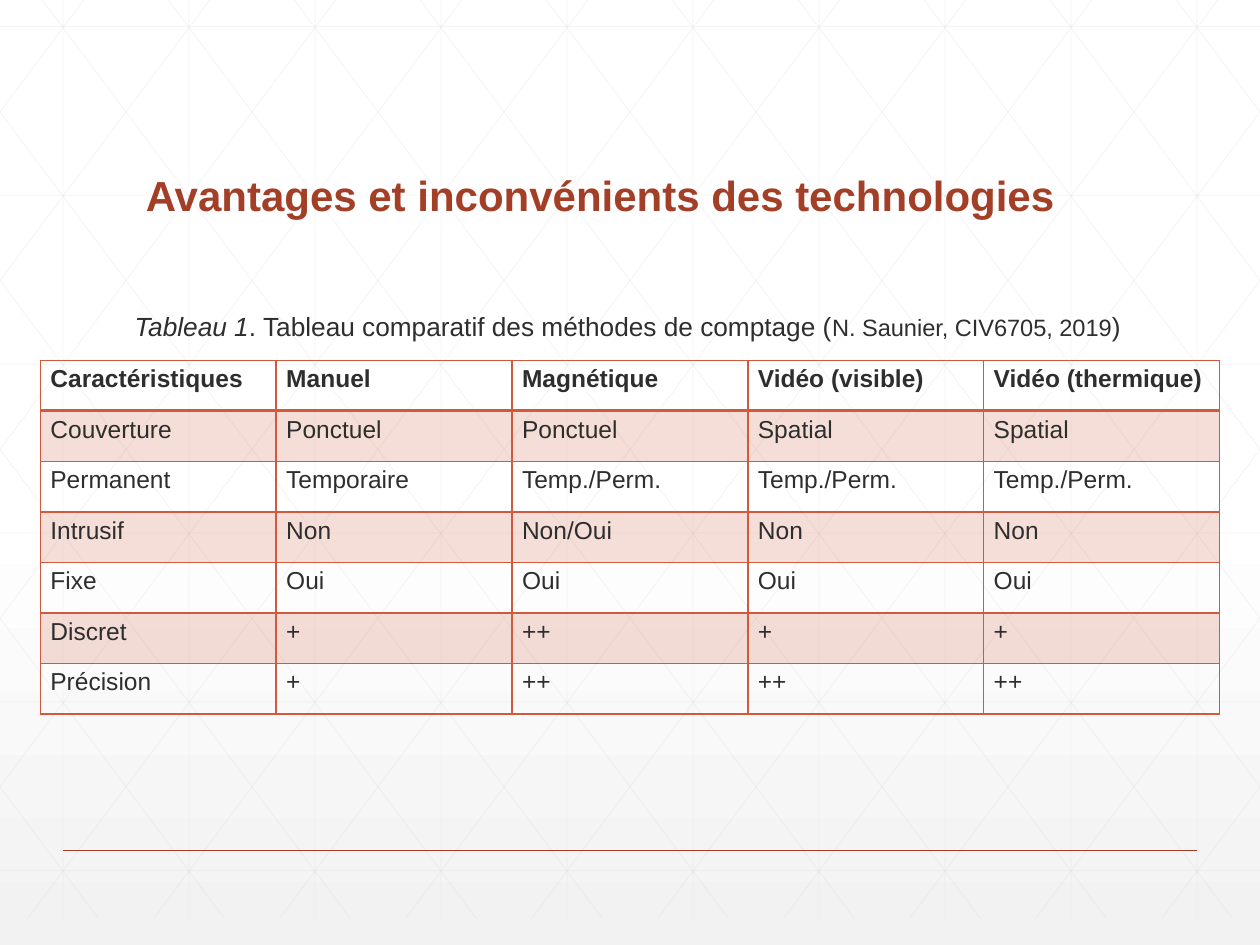
from dataclasses import dataclass

from lxml import etree
from pptx import Presentation
from pptx.dml.color import RGBColor
from pptx.enum.shapes import MSO_CONNECTOR
from pptx.enum.text import MSO_ANCHOR
from pptx.oxml import parse_xml
from pptx.oxml.ns import nsdecls, qn
from pptx.util import Inches, Pt

STRAIGHT = MSO_CONNECTOR.STRAIGHT
TOP, BOTTOM = MSO_ANCHOR.TOP, MSO_ANCHOR.BOTTOM
WIDTH, HEIGHT = 10, 7.5
GRID_TOP, GRID_BOTTOM = -0.21, 7.29
COL, ROW = 1, 1.34
DIAGONAL_START, DIAGONAL_RUN = 0.18, 5.6

ROWS = [
    ["Caractéristiques", "Manuel", "Magnétique", "Vidéo (visible)", "Vidéo (thermique)"],
    ["Couverture", "Ponctuel", "Ponctuel", "Spatial", "Spatial"],
    ["Permanent", "Temporaire", "Temp./Perm.", "Temp./Perm.", "Temp./Perm."],
    ["Intrusif", "Non", "Non/Oui", "Non", "Non"],
    ["Fixe", "Oui", "Oui", "Oui", "Oui"],
    ["Discret", "+", "++", "+", "+"],
    ["Précision", "+", "++", "++", "++"],
]


@dataclass(frozen=True)
class Theme:
    font: str = "Arial"
    text: str = "2D2E2D"
    title: str = "A43F27"
    accent: str = "D15A3E"
    grid: str = "D9D9D9"
    bg_top: str = "FFFFFF"
    bg_bottom: str = "F2F2F2"
    title_size: float = 24
    caption_size: float = 15
    source_size: float = 13.5
    cell_size: float = 14


THEME = Theme()


def set_alpha(fill, percent):
    color = fill._xPr.find(".//" + qn("a:srgbClr"))
    etree.SubElement(color, qn("a:alpha")).set("val", str(percent * 1000))


def add_run(p, text, size=THEME.cell_size, color=THEME.text, bold=False, italic=False):
    r = p.add_run()
    r.text = text
    r.font.name = THEME.font
    r.font.size = Pt(size)
    r.font.bold = bold
    r.font.italic = italic
    r.font.color.rgb = RGBColor.from_string(color)


def add_text(s, box, runs, anchor=TOP, wrap=True, spacing=None):
    tf = s.shapes.add_textbox(*map(Inches, box)).text_frame
    tf.word_wrap = wrap
    tf.vertical_anchor = anchor
    p = tf.paragraphs[0]
    p.line_spacing = spacing
    for text, style in runs:
        add_run(p, text, **style)


def add_line(shapes, start, end, color, width, alpha=None):
    line = shapes.add_connector(STRAIGHT, *map(Inches, (*start, *end)))
    line.line.color.rgb = RGBColor.from_string(color)
    line.line.width = Pt(width)
    if alpha:
        set_alpha(line.line.fill, alpha)
    etree.SubElement(line._element.spPr, qn("a:effectLst"))


def set_background(s):
    fill = s.background.fill
    fill.gradient()
    fill.gradient_angle = 270
    stops = ((0.53, THEME.bg_top), (1, THEME.bg_bottom))
    for stop, (position, color) in zip(fill.gradient_stops, stops):
        stop.position = position
        stop.color.rgb = RGBColor.from_string(color)


def diagonal(x):
    slope = (GRID_BOTTOM - GRID_TOP) / DIAGONAL_RUN
    left, right = max(x, 0), min(x + DIAGONAL_RUN, WIDTH)
    return [(px, GRID_TOP + (px - x) * slope) for px in (left, right)]


def add_grid(s):
    lines = []
    for i in range(10):
        x = (i + 0.5) * COL
        lines.append(((x, GRID_TOP), (x, GRID_BOTTOM)))
    for i in range(6):
        y = 0.21 + i * ROW
        lines.append(((0, y), (WIDTH, y)))
    for i in range(-5, 10):
        start, end = diagonal(DIAGONAL_START + i * COL)
        lines.append((start, end))
        lines.append(((WIDTH - start[0], start[1]), (WIDTH - end[0], end[1])))
    shapes = s.shapes.add_group_shape().shapes
    for start, end in lines:
        add_line(shapes, start, end, THEME.grid, 0.5, alpha=25)


def set_borders(cell, **widths):
    tcPr = cell._tc.get_or_add_tcPr()
    for i, side in enumerate("LRTB"):
        width = Pt(widths.get(side, 1))
        tcPr.insert(i, parse_xml(
            f'<a:ln{side} {nsdecls("a")} w="{width}"><a:solidFill>'
            f'<a:srgbClr val="{THEME.accent}"/></a:solidFill></a:ln{side}>'))


def format_cell(cell, text, row):
    cell.margin_left = cell.margin_right = Inches(0.08)
    cell.margin_top = cell.margin_bottom = Inches(0.04)
    add_run(cell.text_frame.paragraphs[0], text, bold=row == 0)
    if row % 2:
        cell.fill.solid()
        cell.fill.fore_color.rgb = RGBColor.from_string(THEME.accent)
        set_alpha(cell.fill, 20)
    else:
        cell.fill.background()
    set_borders(cell, T=2 if row == 1 else 1, B=2 if row == 0 else 1)


def add_comparison(s, left, top, width, height):
    box = map(Inches, (left, top, width, height))
    table = s.shapes.add_table(len(ROWS), len(ROWS[0]), *box).table
    table.first_row = table.horz_banding = False
    for i, values in enumerate(ROWS):
        for j, text in enumerate(values):
            format_cell(table.cell(i, j), text, i)


def main():
    prs = Presentation()
    prs.slide_width, prs.slide_height = Inches(WIDTH), Inches(HEIGHT)
    s = prs.slides.add_slide(prs.slide_layouts[6])
    set_background(s)
    add_grid(s)
    rule_y = 0.9 * HEIGHT
    add_line(s.shapes, (0.05 * WIDTH, rule_y), (0.95 * WIDTH, rule_y), THEME.title, 1)
    title = {"size": THEME.title_size, "color": THEME.title, "bold": True}
    add_text(s, (1.06, 0.55, 7.88, 1.25),
             [("Avantages et inconvénients des technologies", title)],
             anchor=BOTTOM, spacing=0.9)
    caption = {"size": THEME.caption_size}
    add_text(s, (0.97, 2.41, 8.12, 0.35), [
        ("Tableau 1", {**caption, "italic": True}),
        (". Tableau comparatif des méthodes de comptage (", caption),
        ("N. Saunier, CIV6705, 2019", {"size": THEME.source_size}),
        (")", caption),
    ], wrap=False)
    add_comparison(s, 0.32, 2.86, 9.36, 2.81)
    prs.save("out.pptx")


if __name__ == "__main__":
    main()
